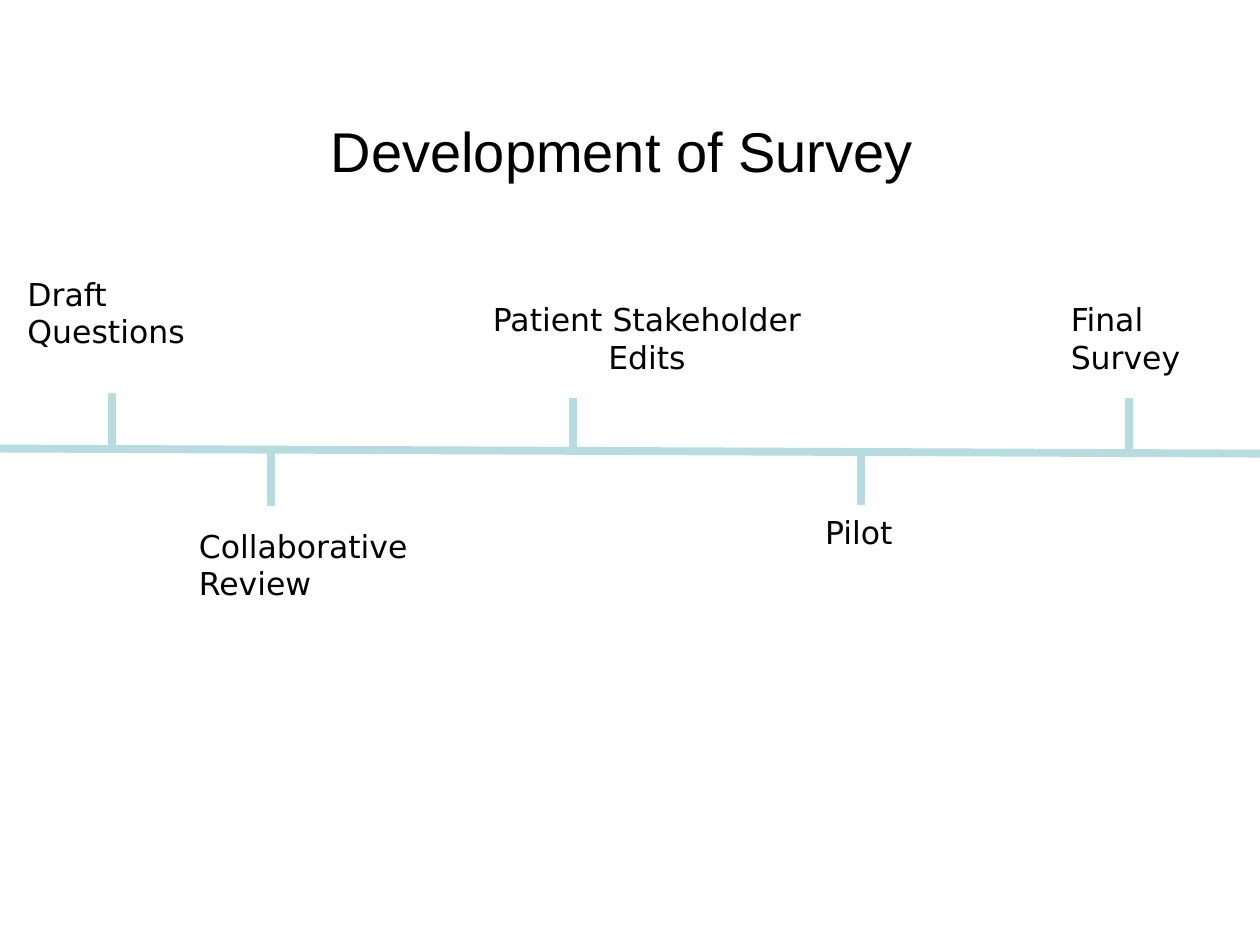
from pptx import Presentation
from pptx.dml.color import RGBColor
from pptx.enum.shapes import MSO_CONNECTOR
from pptx.enum.text import MSO_ANCHOR, PP_ALIGN
from pptx.oxml.ns import qn
from pptx.util import Inches, Pt
from lxml.etree import SubElement

TEAL = RGBColor(0xB6, 0xDC, 0xDF)
BLACK = RGBColor(0, 0, 0)
TICK = 0.44

HEAD = {"name": "Arial", "size": Pt(32)}
BODY = {"name": "DejaVu Sans", "size": Pt(18)}

# Text, left, top, width, height, alignment
LABELS = [
    ("Draft Questions", 0.12, 2.13, 2, 0.71, PP_ALIGN.LEFT),
    ("Collaborative Review", 1.48, 4.13, 2.52, 0.71, PP_ALIGN.LEFT),
    ("Patient Stakeholder Edits", 3.51, 2.33, 3.25, 0.71, PP_ALIGN.CENTER),
    ("Pilot", 6.45, 4.02, 1.54, 0.4, PP_ALIGN.LEFT),
    ("Final Survey", 8.4, 2.33, 1.54, 0.71, PP_ALIGN.LEFT),
]

# Left and top of each tick
TICKS = [(0.89, 3.12), (2.15, 3.58), (4.55, 3.16), (6.83, 3.57), (8.96, 3.16)]


def add_text(slide, text, left, top, width, height, align, style,
             anchor=MSO_ANCHOR.TOP):
    box = slide.shapes.add_textbox(
        Inches(left), Inches(top), Inches(width), Inches(height))
    frame = box.text_frame
    frame.word_wrap = True
    frame.vertical_anchor = anchor
    para = frame.paragraphs[0]
    para.alignment = align
    run = para.add_run()
    run.text = text
    for key, value in style.items():
        setattr(run.font, key, value)
    run.font.color.rgb = BLACK


def add_line(slide, x1, y1, x2, y2):
    line = slide.shapes.add_connector(
        MSO_CONNECTOR.STRAIGHT,
        Inches(x1), Inches(y1), Inches(x2), Inches(y2))
    line.line.color.rgb = TEAL
    line.line.width = Pt(4.5)
    SubElement(line._element.spPr, qn("a:effectLst"))


def main():
    deck = Presentation()
    deck.slide_width = Inches(10)
    deck.slide_height = Inches(7.5)
    slide = deck.slides.add_slide(deck.slide_layouts[6])

    # Title
    add_text(slide, "Development of Survey ", 0.5, 0.83, 9, 0.72,
             PP_ALIGN.CENTER, HEAD, MSO_ANCHOR.MIDDLE)

    # Time line
    add_line(slide, 0, 3.56, 10, 3.6)

    # Stages
    for label in LABELS:
        add_text(slide, *label, BODY)

    # Ticks
    for left, top in TICKS:
        add_line(slide, left, top, left, top + TICK)

    deck.save("out.pptx")


if __name__ == "__main__":
    main()
